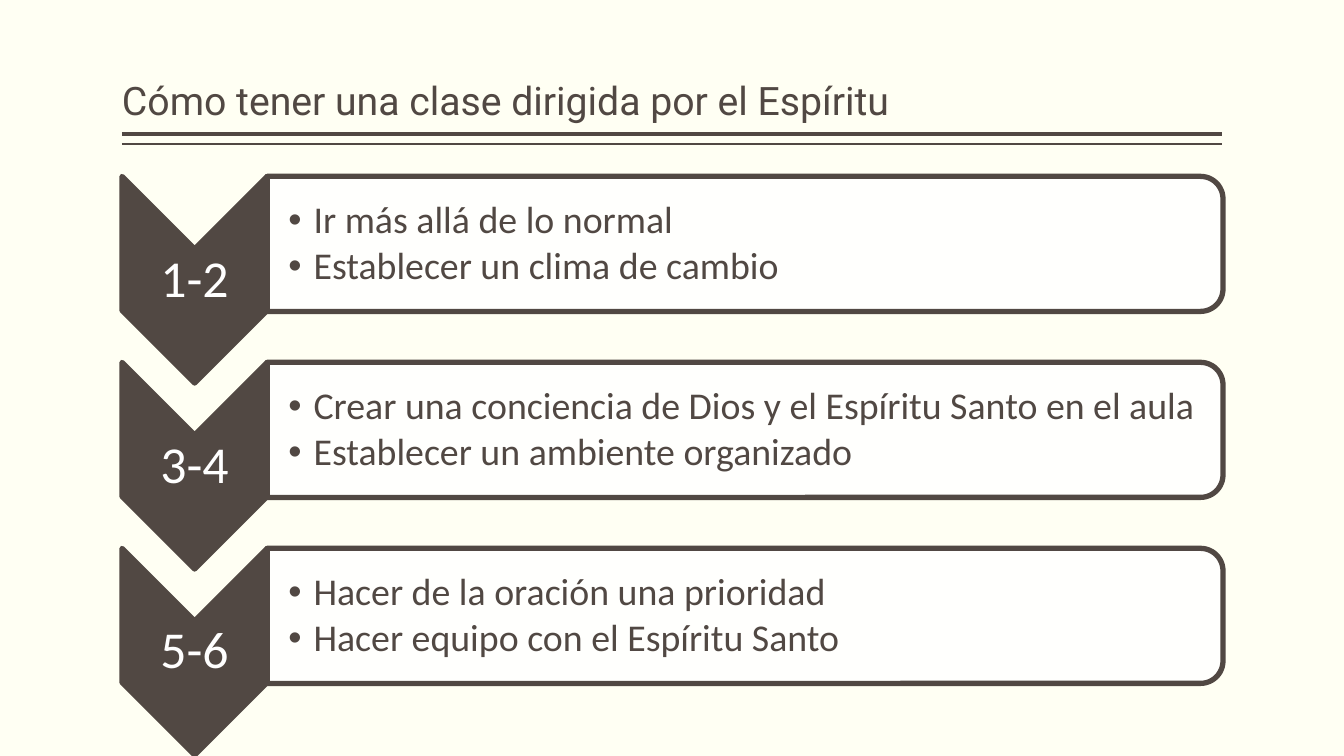
"""Build a slide with three numbered chevrons, each beside a panel of bullets."""
from lxml.etree import SubElement
from pptx import Presentation
from pptx.dml.color import RGBColor
from pptx.enum.shapes import MSO_CONNECTOR, MSO_SHAPE
from pptx.enum.text import MSO_ANCHOR, PP_ALIGN
from pptx.oxml.ns import qn
from pptx.util import Pt

TITLE = "Cómo tener una clase dirigida por el Espíritu"
STEPS = [
    ("1-2", ["Ir más allá de lo normal", "Establecer un clima de cambio"]),
    ("3-4", ["Crear una conciencia de Dios y el Espíritu Santo en el aula",
             "Establecer un ambiente organizado"]),
    ("5-6", ["Hacer de la oración una prioridad", "Hacer equipo con el Espíritu Santo"]),
]
COLORS = {"paper": "FFFFF3", "ink": "514843", "white": "FFFFFF"}
RULES = [(133, 3), (143, 1)]
PX = 9144
LEFT, RIGHT = 121, 1212
STEP_TOP, STEP_PITCH = 175, 184.5
CHEVRON_W, CHEVRON_H = 144, 205
PANEL_W, PANEL_H = 948, 134
TITLE_FORMAT = {"size": Pt(28), "name": "Roboto"}
LABEL_FORMAT = {"size": Pt(37), "name": "Calibri"}
BULLET_FORMAT = {"size": Pt(27), "name": "Calibri"}


def emu(*lengths):
    return [round(length * PX) for length in lengths]


def rgb(color):
    return RGBColor.from_string(COLORS[color])


def add_text(slide, box, lines, font_format, color, insets, anchor,
             align=PP_ALIGN.LEFT, space_after=0, bulleted=False):
    frame = slide.shapes.add_textbox(*emu(*box)).text_frame
    sides = ("margin_left", "margin_top", "margin_right", "margin_bottom")
    frame_format = dict(zip(sides, emu(*insets)), word_wrap=True, vertical_anchor=anchor)
    for key, value in frame_format.items():
        setattr(frame, key, value)
    frame.text = "\n".join(lines)
    for paragraph in frame.paragraphs:
        paragraph_format = {"alignment": align, "line_spacing": 0.9,
                            "space_after": Pt(space_after)}
        for key, value in paragraph_format.items():
            setattr(paragraph, key, value)
        font = paragraph.runs[0].font
        for key, value in font_format.items():
            setattr(font, key, value)
        font.color.rgb = rgb(color)
        if bulleted:
            properties = paragraph._p.get_or_add_pPr()
            properties.set("marL", str(25 * PX))
            properties.set("indent", str(-25 * PX))
            SubElement(properties, qn("a:buFont"), typeface="Arial")
            SubElement(properties, qn("a:buChar"), char="•")


def add_turned(slide, preset, left, top, width, height, color):
    """Add a preset turned a quarter clockwise that covers the given box."""
    shift = (width - height) / 2
    turned = slide.shapes.add_shape(
        preset, *emu(left + shift, top - shift, height, width))
    turned.rotation = 90
    turned.shadow.inherit = False
    turned.fill.solid()
    turned.fill.fore_color.rgb = rgb(color)
    turned.line.color.rgb = rgb("ink")
    turned.line.width = Pt(3.78)
    SubElement(turned.line._ln, qn("a:round"))
    return turned


def add_rule(slide, y, weight):
    rule = slide.shapes.add_connector(MSO_CONNECTOR.STRAIGHT, *emu(LEFT, y, RIGHT, y))
    rule.line.color.rgb = rgb("ink")
    rule.line.width = Pt(weight)
    SubElement(rule._element.spPr, qn("a:effectLst"))


def add_step(slide, top, label, bullets):
    panel_left = LEFT + CHEVRON_W
    add_turned(slide, MSO_SHAPE.CHEVRON, LEFT, top, CHEVRON_W, CHEVRON_H, "ink")
    add_text(slide, (LEFT, top + 72, CHEVRON_W, 62), [label], LABEL_FORMAT, "white",
             (3, 3, 3, 3), MSO_ANCHOR.MIDDLE, PP_ALIGN.CENTER)
    panel = add_turned(slide, MSO_SHAPE.ROUND_2_SAME_RECTANGLE,
                       panel_left, top, PANEL_W, PANEL_H, "white")
    fill_color = panel._element.spPr.find(qn("a:solidFill"))[0]
    SubElement(fill_color, qn("a:alpha"), val="90000")
    add_text(slide, (panel_left, top + 7, 941, 121), bullets, BULLET_FORMAT, "ink",
             (21, 2, 2, 2), MSO_ANCHOR.MIDDLE, space_after=4, bulleted=True)


def main():
    deck = Presentation()
    deck.slide_width, deck.slide_height = emu(1333, 750)
    slide = deck.slides.add_slide(deck.slide_layouts[6])
    slide.background.fill.solid()
    slide.background.fill.fore_color.rgb = rgb("paper")
    for y, weight in RULES:
        add_rule(slide, y, weight)
    add_text(slide, (LEFT, 8, RIGHT - LEFT, 120), [TITLE], TITLE_FORMAT, "ink",
             (0, 5, 0, 5), MSO_ANCHOR.BOTTOM)
    for row, (label, bullets) in enumerate(STEPS):
        add_step(slide, STEP_TOP + row * STEP_PITCH, label, bullets)
    deck.save("out.pptx")


if __name__ == "__main__":
    main()
